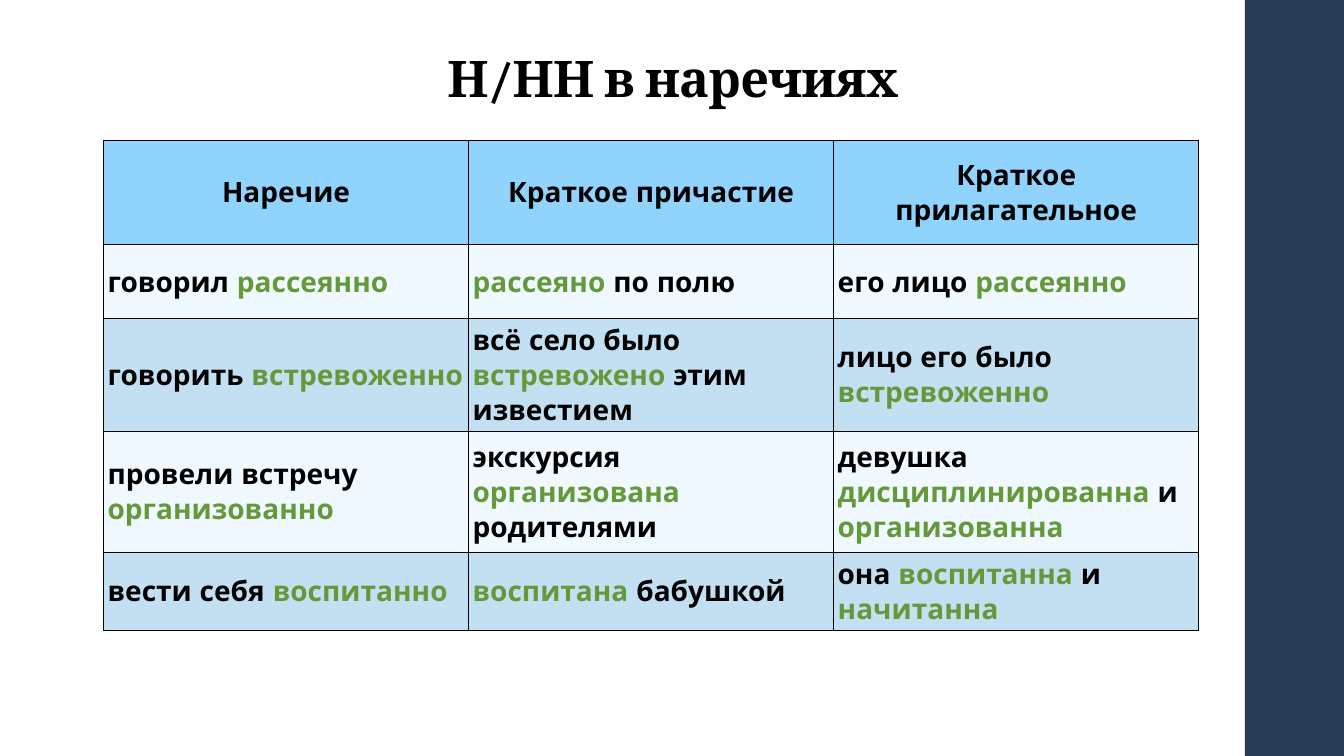
from lxml.etree import SubElement
from pptx import Presentation
from pptx.dml.color import RGBColor
from pptx.enum.shapes import MSO_SHAPE
from pptx.enum.text import MSO_ANCHOR, PP_ALIGN
from pptx.oxml.ns import qn
from pptx.util import Cm, Pt

COLORS = {
    "black": "000000",
    "navy": "283C55",
    "green": "649939",
    "header": "90D3FD",
    "light": "EFF9FF",
    "medium": "C3E0F3",
}

# Words between asterisks are highlighted in green
ROWS = [
    ["Наречие", "Краткое причастие", "Краткое прилагательное"],
    ["говорил *рассеянно*", "*рассеяно* по полю", "его лицо *рассеянно*"],
    ["говорить *встревоженно*", "всё село было *встревожено* этим известием",
     "лицо его было *встревоженно*"],
    ["провели встречу *организованно*", "экскурсия *организована* родителями",
     "девушка *дисциплинированна* и *организованна*"],
    ["вести себя *воспитанно*", "*воспитана* бабушкой",
     "она *воспитанна* и *начитанна*"],
]
ROW_HEIGHTS = [2.64, 1.85, 2.85, 3.05, 1.96]


def color(name):
    return RGBColor.from_string(COLORS[name])


def write_text(frame, text, font="Quicksand", size=20, align=PP_ALIGN.LEFT,
               line_spacing=None, tracking=None):
    frame.word_wrap = True
    paragraph = frame.paragraphs[0]
    paragraph.alignment = align
    if line_spacing:
        paragraph.line_spacing = line_spacing
    for index, part in enumerate(text.split("*")):
        if not part:
            continue
        run = paragraph.add_run()
        run.text = part
        run.font.name = font
        run.font.size = Pt(size)
        run.font.bold = True
        run.font.color.rgb = color("green" if index % 2 else "black")
        if tracking is not None:
            run.font._element.set("spc", str(int(tracking * 100)))


def add_borders(cell):
    properties = cell._tc.get_or_add_tcPr()
    for side in ("lnL", "lnR", "lnT", "lnB"):
        line = SubElement(properties, qn(f"a:{side}"), w=str(Pt(0.75)))
        fill = SubElement(line, qn("a:solidFill"))
        SubElement(fill, qn("a:srgbClr"), val=COLORS["black"])


def add_side_band(slide, left, top, width, height):
    band = slide.shapes.add_shape(MSO_SHAPE.RECTANGLE, left, top, width, height)
    band.shadow.inherit = False
    band.fill.solid()
    band.fill.fore_color.rgb = color("navy")
    band.line.fill.background()


def add_title(slide, left, top, width, height):
    frame = slide.shapes.add_textbox(left, top, width, height).text_frame
    frame.vertical_anchor = MSO_ANCHOR.BOTTOM
    write_text(frame, "Н/НН в наречиях", font="Cambria", size=36,
               align=PP_ALIGN.CENTER, line_spacing=0.9, tracking=-0.5)


def add_comparison_table(slide, left, top, width, height):
    table = slide.shapes.add_table(len(ROWS), len(ROWS[0]), left, top,
                                   width, height).table
    for row, row_height in zip(table.rows, ROW_HEIGHTS):
        row.height = Cm(row_height)
    for row_index, texts in enumerate(ROWS):
        is_header = row_index == 0
        fill_name = "header" if is_header else ("medium", "light")[row_index % 2]
        for column_index, text in enumerate(texts):
            cell = table.cell(row_index, column_index)
            cell.margin_left = cell.margin_right = Cm(0.1)
            cell.margin_top = cell.margin_bottom = Cm(0.1)
            cell.vertical_anchor = MSO_ANCHOR.MIDDLE
            add_borders(cell)
            cell.fill.solid()
            cell.fill.fore_color.rgb = color(fill_name)
            write_text(cell.text_frame, text,
                       align=PP_ALIGN.CENTER if is_header else PP_ALIGN.LEFT)


def main():
    presentation = Presentation()
    presentation.slide_width = Cm(33.87)
    presentation.slide_height = Cm(19.05)
    slide = presentation.slides.add_slide(presentation.slide_layouts[6])

    # Side band
    add_side_band(slide, Cm(31.37), Cm(0), Cm(2.5), presentation.slide_height)
    # Title
    add_title(slide, Cm(3.5), Cm(1.02), Cm(26.92), Cm(1.83))
    # Comparison table
    add_comparison_table(slide, Cm(2.61), Cm(3.53), Cm(27.6), Cm(sum(ROW_HEIGHTS)))

    presentation.save("out.pptx")


if __name__ == "__main__":
    main()
